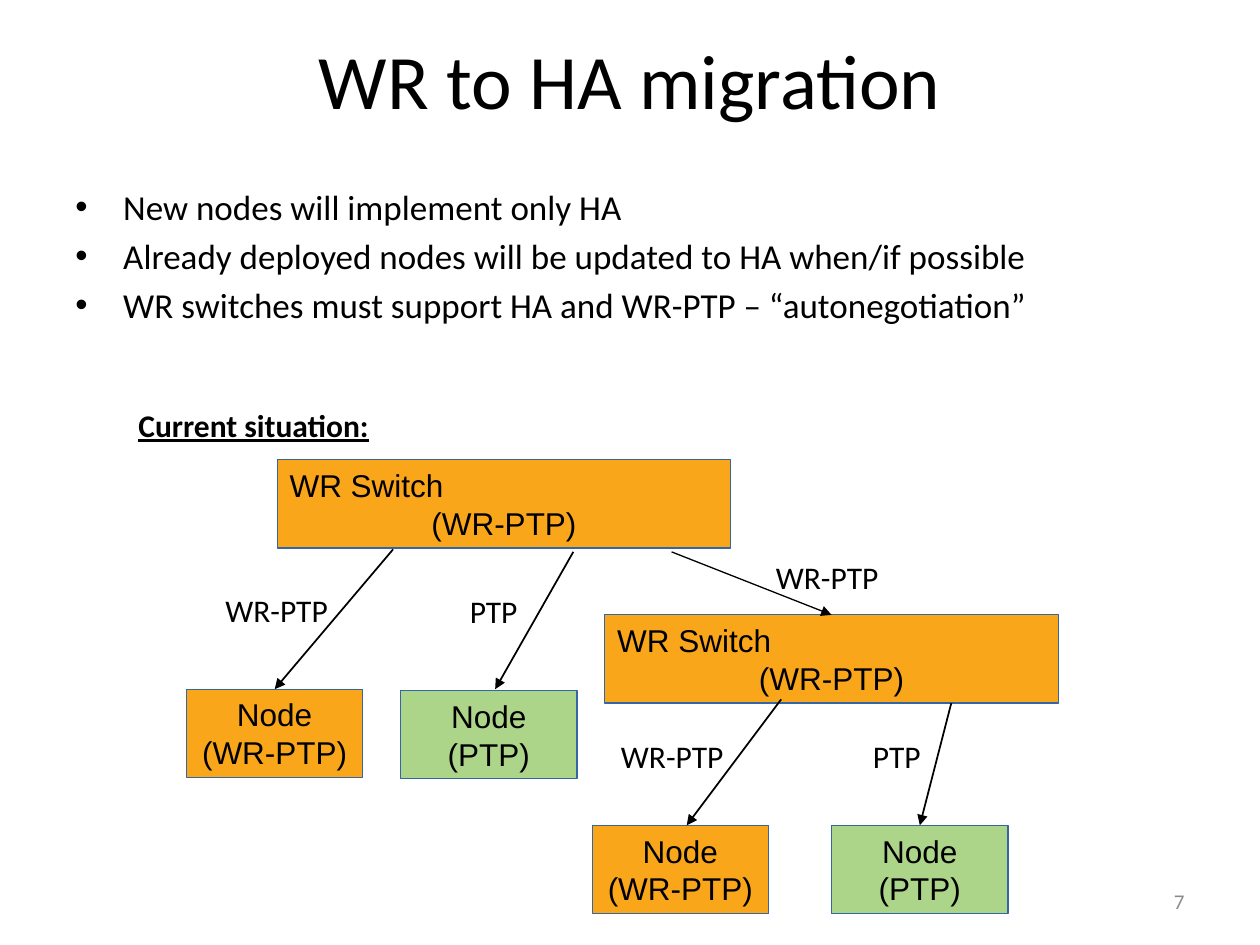
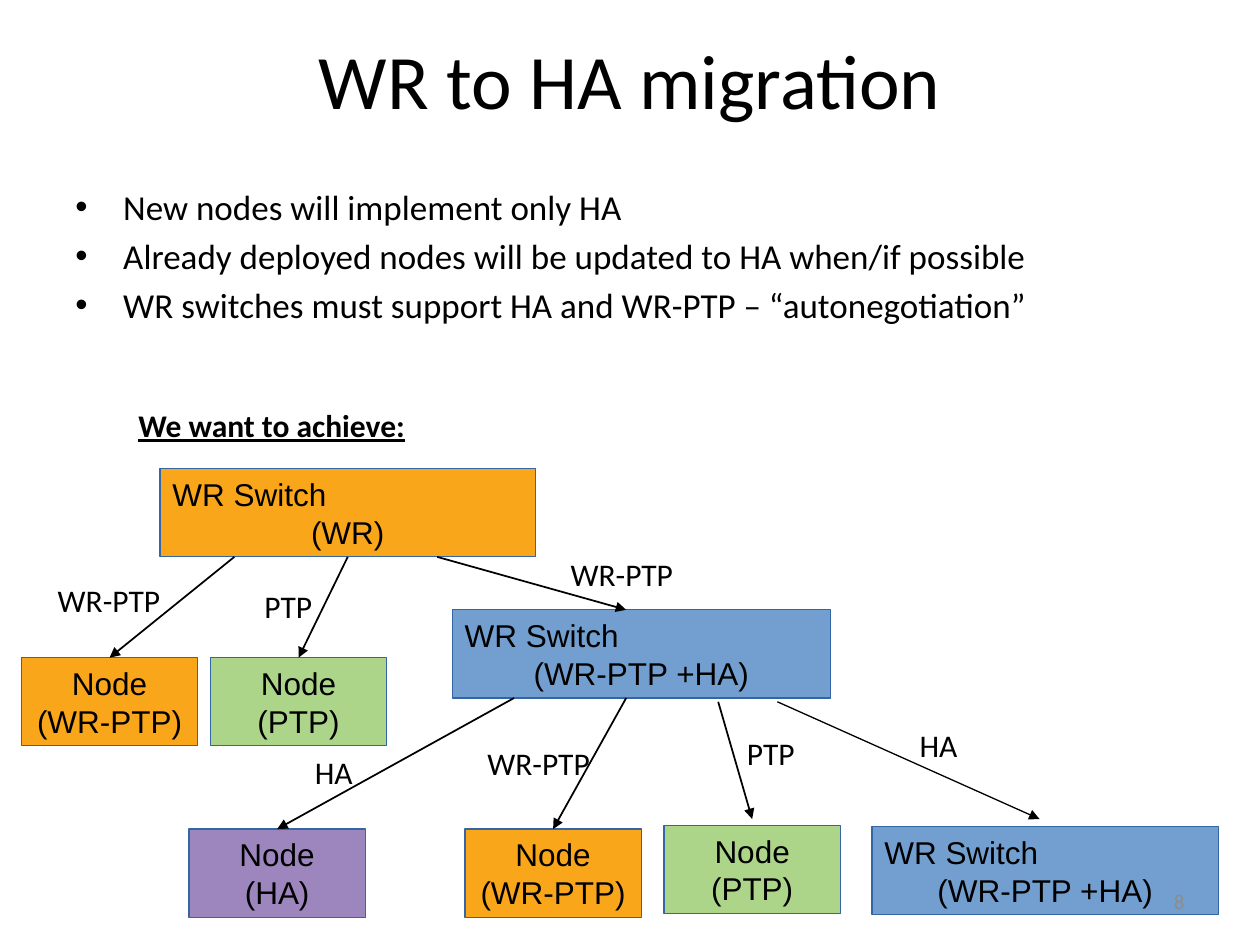
from lxml.etree import SubElement
from pptx import Presentation
from pptx.dml.color import RGBColor
from pptx.enum.shapes import MSO_CONNECTOR as CONN, MSO_SHAPE as SHAPE
from pptx.enum.text import MSO_ANCHOR as ANCHOR, MSO_AUTO_SIZE as AUTO, PP_ALIGN as ALIGN
from pptx.oxml.ns import qn
from pptx.util import Inches, Pt

COLORS = {"text": "000000", "number": "8C8C8C", "border": "3465A4", "wr": "FAA61A",
          "ptp": "ADD58A", "ha": "9D85BE", "both": "729FCF"}
BULLETS = ["New nodes will implement only HA",
           "Already deployed nodes will be updated to HA when/if possible",
           "WR switches must support HA and WR-PTP – “autonegotiation”"]
BOX_H = 0.7
NODE_W = 1.4


class Deck:
    """Holds the style and the current slide, and draws each kind of element."""

    def __init__(self):
        self.prs = Presentation()
        self.prs.slide_width, self.prs.slide_height = Inches(10), Inches(7.5)
        self.s = None

    def color(self, name):
        return RGBColor.from_string(COLORS[name])

    def style(self, p, size, font="Calibri", color="text", align=ALIGN.LEFT):
        p.alignment = align
        for r in p.runs:
            r.font.size, r.font.name = Pt(size), font
            r.font.color.rgb = self.color(color)

    def text(self, x, y, w, h, text, size, color="text", align=ALIGN.LEFT, anchor=ANCHOR.MIDDLE):
        tf = self.s.shapes.add_textbox(Inches(x), Inches(y), Inches(w), Inches(h)).text_frame
        tf.word_wrap, tf.vertical_anchor = True, anchor
        tf.text = text
        for p in tf.paragraphs:
            self.style(p, size, color=color, align=align)
        return tf

    def label(self, x, y, w, text):
        tf = self.text(x, y, w, 0.4, text, 18, anchor=ANCHOR.TOP)
        tf.word_wrap, tf.auto_size = False, AUTO.SHAPE_TO_FIT_TEXT
        return tf

    def labels(self, text, w, places):
        for x, y in places:
            self.label(x, y, w, text)

    def bullets(self, items):
        tf = self.text(0.5, 1.42, 9, 5.28, "\n".join(items), 20, anchor=ANCHOR.TOP)
        for p in tf.paragraphs:
            p.space_before = Pt(4)
            pPr = p._p.get_or_add_pPr()
            pPr.set("marL", str(Inches(0.38)))
            pPr.set("indent", str(-Inches(0.38)))
            SubElement(pPr, qn("a:buFont"), typeface="Arial")
            SubElement(pPr, qn("a:buChar"), char="•")

    def slide(self, heading, heading_w):
        self.s = self.prs.slides.add_slide(self.prs.slide_layouts[6])
        self.text(0.5, 0, 9, 1.25, "WR to HA migration", 44, align=ALIGN.CENTER)
        self.bullets(BULLETS)
        font = self.label(1, 3.17, heading_w, heading).paragraphs[0].runs[0].font
        font.bold = font.underline = True

    def number(self, n):
        self.text(7.17, 6.95, 2.33, 0.4, str(n), 12, "number", ALIGN.RIGHT)

    def box(self, x, y, w, name, mode, fill, name_align):
        sp = self.s.shapes.add_shape(SHAPE.RECTANGLE, Inches(x), Inches(y), Inches(w), Inches(BOX_H))
        sp.shadow.inherit = False
        sp.fill.solid()
        sp.fill.fore_color.rgb = self.color(fill)
        sp.line.color.rgb, sp.line.width = self.color("border"), Pt(0.75)
        tf = sp.text_frame
        tf.word_wrap, tf.vertical_anchor = True, ANCHOR.MIDDLE
        tf.text = f"{name}\n({mode})"
        for p, align in zip(tf.paragraphs, (name_align, ALIGN.CENTER)):
            self.style(p, 18, "Arial", align=align)
        return sp

    def node(self, x, y, mode, fill):
        return self.box(x, y, NODE_W, "Node", mode, fill, ALIGN.CENTER)

    def switch(self, x, y, w, mode, fill):
        return self.box(x, y, w, "WR Switch", mode, fill, ALIGN.LEFT)

    def arrow(self, start, end, width=1):
        ends = [(Inches(e[0]), Inches(e[1])) if isinstance(e, tuple) else (0, 0) for e in (start, end)]
        c = self.s.shapes.add_connector(CONN.STRAIGHT, *ends[0], *ends[1])
        if not isinstance(start, tuple):
            c.begin_connect(start, 2)
        if not isinstance(end, tuple):
            c.end_connect(end, 0)
        c.line.color.rgb, c.line.width = self.color("text"), Pt(width)
        spPr = c._element.spPr
        SubElement(spPr.find(qn("a:ln")), qn("a:tailEnd"), type="triangle")
        SubElement(spPr, qn("a:effectLst"))


def current_situation(d):
    d.slide("Current situation:", 2.05)
    d.switch(2.2, 3.65, 3.6, "WR-PTP", "wr")
    lower = d.switch(4.8, 4.88, 3.6, "WR-PTP", "wr")
    wr_node = d.node(1.48, 5.47, "WR-PTP", "wr")
    d.node(3.18, 5.48, "PTP", "ptp")
    d.node(4.7, 6.55, "WR-PTP", "wr")
    ptp_node = d.node(6.6, 6.55, "PTP", "ptp")
    d.arrow((3.12, 4.36), wr_node)
    d.arrow((4.55, 4.38), (3.93, 5.47))
    d.arrow((5.33, 4.38), lower, 0.75)
    d.arrow((6.2, 5.55), (5.45, 6.55))
    d.arrow((7.55, 5.58), ptp_node)
    d.labels("WR-PTP", 1.02, [(6.06, 4.38), (1.69, 4.64), (4.83, 5.8)])
    d.labels("PTP", 0.58, [(3.63, 4.65), (6.83, 5.8)])
    d.number(7)


def target(d):
    d.slide("We want to achieve:", 2.34)
    top = d.switch(1.27, 3.72, 2.98, "WR", "wr")
    d.switch(3.59, 4.84, 3, "WR-PTP +HA", "both")
    d.switch(6.92, 6.56, 2.75, "WR-PTP +HA", "both")
    upper_wr = d.node(0.17, 5.22, "WR-PTP", "wr")
    upper_ptp = d.node(1.67, 5.22, "PTP", "ptp")
    ha_node = d.node(1.5, 6.58, "HA", "ha")
    lower_wr = d.node(3.69, 6.58, "WR-PTP", "wr")
    d.node(5.27, 6.55, "PTP", "ptp")
    d.arrow((1.86, 4.42), upper_wr)
    d.arrow(top, upper_ptp)
    d.arrow((3.47, 4.42), (4.97, 4.84))
    d.arrow((4.08, 5.54), ha_node)
    d.arrow((4.97, 5.54), lower_wr)
    d.arrow((5.7, 5.57), (5.97, 6.5))
    d.arrow((6.17, 5.57), (8.25, 6.5), 0.75)
    d.labels("WR-PTP", 1.02, [(3.77, 5.86), (0.36, 4.56), (4.43, 4.36)])
    d.labels("PTP", 0.58, [(2, 4.61), (5.83, 5.78)])
    d.labels("HA", 0.51, [(7.2, 5.71), (2.4, 5.93)])
    d.number(8)


def main():
    d = Deck()
    current_situation(d)
    target(d)
    d.prs.save("out.pptx")


if __name__ == "__main__":
    main()
